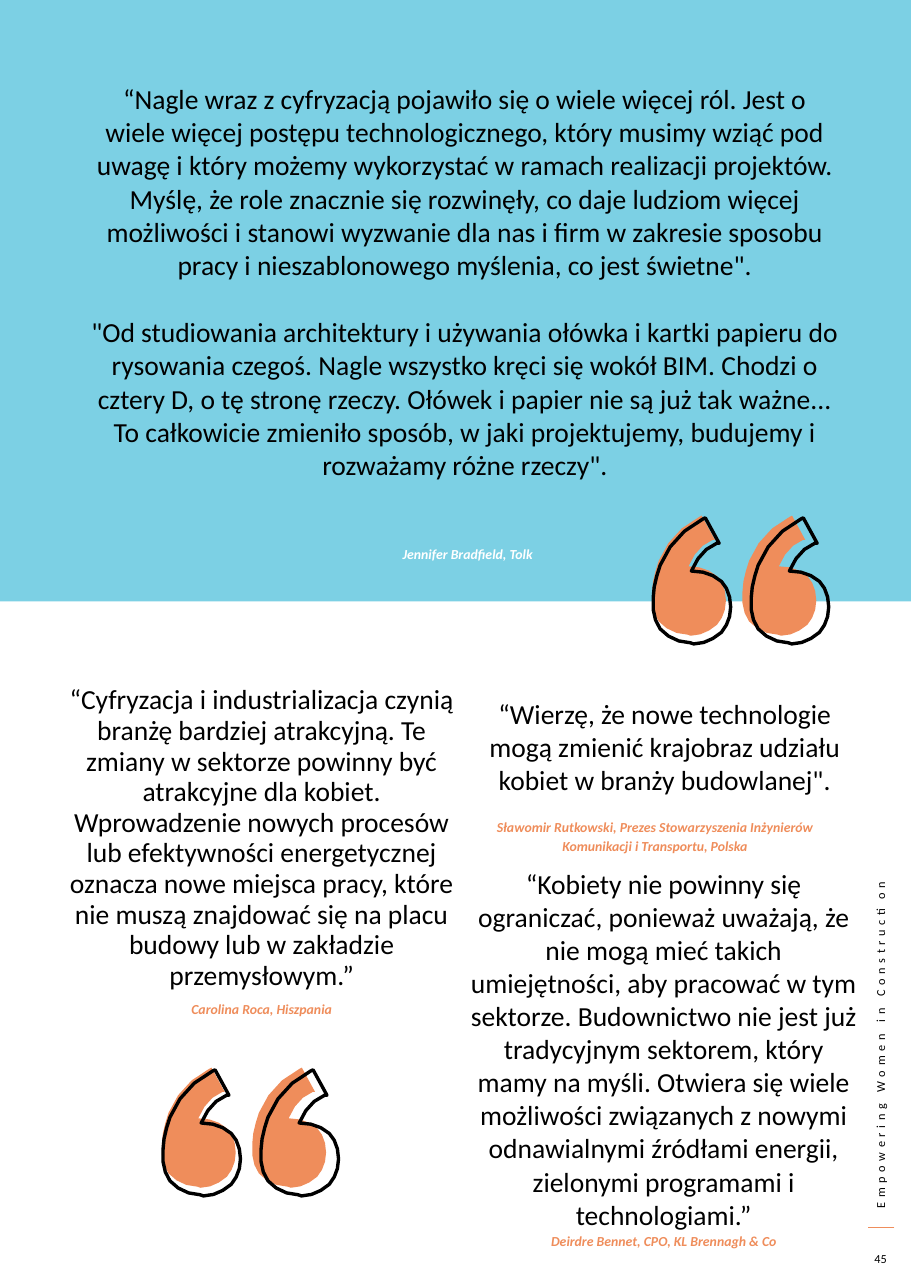
from pptx import Presentation
from pptx.dml.color import RGBColor
from pptx.enum.shapes import MSO_CONNECTOR, MSO_SHAPE
from pptx.enum.text import MSO_ANCHOR, PP_ALIGN
from pptx.oxml.ns import qn
from pptx.util import Pt

RECTANGLE = MSO_SHAPE.RECTANGLE
STRAIGHT = MSO_CONNECTOR.STRAIGHT
CENTER, LEFT = PP_ALIGN.CENTER, PP_ALIGN.LEFT
TOP, MIDDLE = MSO_ANCHOR.TOP, MSO_ANCHOR.MIDDLE

PX = 9144  # EMU per px, 100 px to the inch
COLORS = {"blue": "7CD0E4", "orange": "EF8D5B", "black": "000000", "white": "FFFFFF"}

# Quotation mark: start point, then curves (three points) and lines (one point)
MARK_START = (35, 109)
MARK_STEPS = [
    [(32, 108)],
    [(22, 108), (12, 103), (6, 96)],
    [(1, 89), (-1, 80), (0, 69)],
    [(0, 60), (3, 50), (6, 41)],
    [(13, 24), (25, 10), (43, 1)],
    [(45, 0)], [(57, 22)], [(55, 22)],
    [(45, 26), (38, 34), (33, 46)],
    [(44, 46), (52, 49), (59, 55)],
    [(64, 60), (67, 68), (67, 77)],
    [(67, 86), (64, 93), (59, 99)],
    [(52, 105), (44, 109), (35, 109)],
]
CURVE_PARTS = 3


def curve_point(a, b, c, d, t):
    """Point at t on a cubic curve."""
    u = 1 - t
    return tuple(u**3 * p + 3 * u * u * t * q + 3 * u * t * t * r + t**3 * s
                 for p, q, r, s in zip(a, b, c, d))


def mark_points():
    points = [MARK_START]
    for step in MARK_STEPS:
        if len(step) == 1:
            points += step
        else:
            start = points[-1]
            points += [curve_point(start, *step, i / CURVE_PARTS)
                       for i in range(1, CURVE_PARTS + 1)]
    return points[:-1]


class QuotePage:
    def __init__(self, deck, font="Calibri"):
        self.page = deck.slides.add_slide(deck.slide_layouts[6])
        self.shapes = self.page.shapes
        self.font = font

    def color(self, name):
        return RGBColor.from_string(COLORS[name])

    def band(self, x, y, w, h, color):
        band = self.shapes.add_shape(RECTANGLE, x * PX, y * PX, w * PX, h * PX)
        band.shadow.inherit = False
        band.fill.solid()
        band.fill.fore_color.rgb = self.color(color)
        band.line.fill.background()

    def rule(self, x1, y1, x2, y2, color):
        rule = self.shapes.add_connector(STRAIGHT, x1 * PX, y1 * PX, x2 * PX, y2 * PX)
        rule.line.color.rgb = self.color(color)
        rule.line.width = Pt(1)
        properties = rule._element.spPr
        properties.append(properties.makeelement(qn("a:effectLst"), {}))

    def text(self, x, y, w, h, paragraphs, size=18, color="black", accent=False,
             align=CENTER, anchor=TOP, spacing=None, rotation=0, tracking=0):
        box = self.shapes.add_textbox(x * PX, y * PX, w * PX, h * PX)
        box.rotation = rotation
        frame = box.text_frame
        frame.word_wrap = True
        frame.vertical_anchor = anchor
        for i, words in enumerate(paragraphs):
            para = frame.add_paragraph() if i else frame.paragraphs[0]
            span = para.add_run()
            span.text = words
            para.alignment = align
            para.space_before = Pt(22.7 if i else 0)
            if spacing:
                para.line_spacing = spacing
            para.font.name = self.font
            para.font.size = Pt(size)
            para.font.bold = para.font.italic = accent
            para.font.color.rgb = self.color(color)
            if tracking:
                span.font._element.set("spc", str(tracking * 100))

    def credit(self, x, y, words, color="orange", spacing=1.15):
        self.text(x, y, 357, 43, [words], size=9, color=color, accent=True, spacing=spacing)

    def mark_pair(self, x, y, step, scale=1.0):
        """Two marks, one step apart, in a single outline."""
        first, second = [[((left + px * scale) * PX, (y + py * scale) * PX)
                          for px, py in mark_points()] for left in (x, x + step)]
        builder = self.shapes.build_freeform(*first[0], scale=1.0)
        builder.add_line_segments(first[1:], close=True)
        builder.move_to(*second[0])
        builder.add_line_segments(second[1:], close=True)
        pair = builder.convert_to_shape()
        pair.shadow.inherit = False
        return pair

    def quotation_marks(self, x, y):
        solid = self.mark_pair(x, y, 82)
        solid.fill.solid()
        solid.fill.fore_color.rgb = self.color("orange")
        solid.line.fill.background()
        outline = self.mark_pair(x + 1, y + 2, 89, 1.05)
        outline.fill.background()
        outline.line.color.rgb = self.color("black")
        outline.line.width = Pt(2.2)


def main():
    deck = Presentation()
    deck.slide_width, deck.slide_height = 827 * PX, 1169 * PX
    page = QuotePage(deck)

    # Side title, rule and page number
    page.text(626, 921, 347, 24, ["Empowering Women in Construction"], size=8,
              align=LEFT, rotation=270, tracking=3)
    page.rule(812, 1114, 788, 1114, "orange")
    page.text(780, 1128, 39, 29, ["45"], size=8, anchor=MIDDLE)

    # Blue upper area with the main quotes
    page.band(0, 0, 827, 546, "blue")
    page.text(72, 129, 700, 253, [
        "“Nagle wraz z cyfryzacją pojawiło się o wiele więcej ról. Jest o wiele więcej "
        "postępu technologicznego, który musimy wziąć pod uwagę i który możemy wykorzystać "
        "w ramach realizacji projektów. Myślę, że role znacznie się rozwinęły, co daje "
        "ludziom więcej możliwości i stanowi wyzwanie dla nas i firm w zakresie sposobu "
        "pracy i nieszablonowego myślenia, co jest świetne\".",
        "\"Od studiowania architektury i używania ołówka i kartki papieru do rysowania "
        "czegoś. Nagle wszystko kręci się wokół BIM. Chodzi o cztery D, o tę stronę rzeczy. "
        "Ołówek i papier nie są już tak ważne... To całkowicie zmieniło sposób, w jaki "
        "projektujemy, budujemy i rozważamy różne rzeczy\".",
    ], anchor=MIDDLE)
    page.quotation_marks(592, 468)
    page.credit(246, 488, "Jennifer Bradfield, Tolk", color="white")

    # Right column, first quote
    page.text(416, 628, 375, 130, [
        "“Wierzę, że nowe technologie mogą zmienić krajobraz udziału kobiet w branży "
        "budowlanej\"."])
    page.credit(416, 736, "Sławomir Rutkowski, Prezes Stowarzyszenia Inżynierów "
                          "Komunikacji i Transportu, Polska")

    # Left column
    page.text(50, 674, 375, 173, [
        "“Cyfryzacja i industrializacja czynią branżę bardziej atrakcyjną. Te zmiany w "
        "sektorze powinny być atrakcyjne dla kobiet. Wprowadzenie nowych procesów lub "
        "efektywności energetycznej oznacza nowe miejsca pracy, które nie muszą znajdować "
        "się na placu budowy lub w zakładzie przemysłowym.”"],
        anchor=MIDDLE, spacing=Pt(20))
    page.credit(59, 901, "Carolina Roca, Hiszpania")
    page.quotation_marks(147, 969)

    # Right column, second quote
    page.text(415, 782, 375, 130, [
        "“Kobiety nie powinny się ograniczać, ponieważ uważają, że nie mogą mieć takich "
        "umiejętności, aby pracować w tym sektorze. Budownictwo nie jest już tradycyjnym "
        "sektorem, który mamy na myśli. Otwiera się wiele możliwości związanych z nowymi "
        "odnawialnymi źródłami energii, zielonymi programami i technologiami.”"])
    page.credit(424, 1114, "Deirdre Bennet, CPO, KL Brennagh & Co", spacing=None)

    deck.save("out.pptx")


if __name__ == "__main__":
    main()
